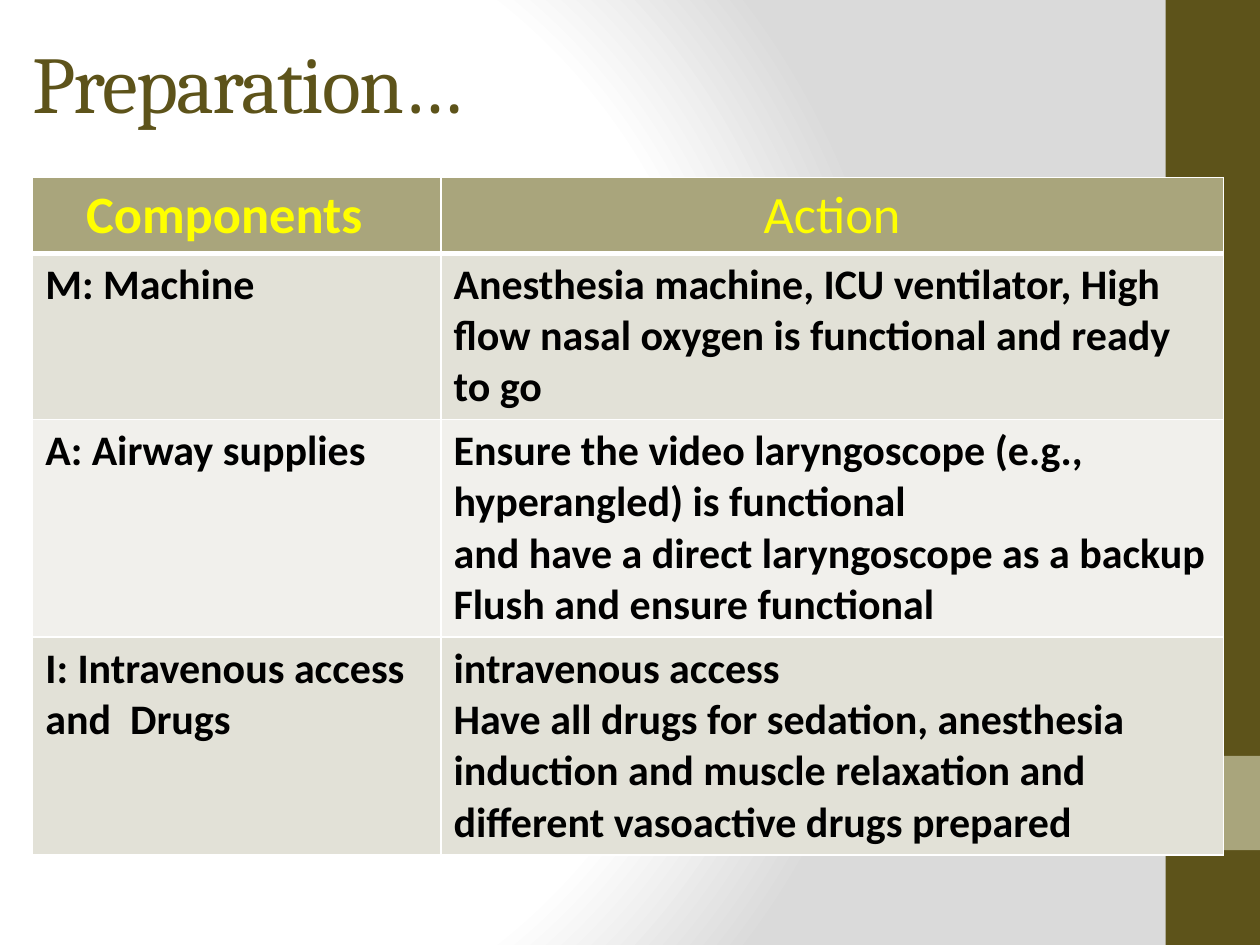
from pptx import Presentation
from pptx.dml.color import RGBColor
from pptx.enum.shapes import MSO_SHAPE
from pptx.enum.text import MSO_ANCHOR, PP_ALIGN
from pptx.oxml import parse_xml
from pptx.oxml.ns import nsdecls, qn
from pptx.util import Cm, Pt

OLIVE, SAGE, WHITE, YELLOW, BLACK = "5D531A", "A9A57C", "FFFFFF", "FFFF00", "000000"
BANDS = ["E2E1D7", "F1F0EC"]
COL_WIDTHS = [8.23, 15.77]
ROW_HEIGHTS = [1.52, 3.35, 4.39, 4.39]
HEADERS = ["Components", "Action"]
ROWS = [
    ("M: Machine",
     "Anesthesia machine, ICU ventilator, High flow nasal oxygen is functional and ready to go"),
    ("A: Airway supplies",
     "Ensure the video laryngoscope (e.g., hyperangled) is functional\n"
     "and have a direct laryngoscope as a backup Flush and ensure functional"),
    ("I: Intravenous access and  Drugs",
     "intravenous access\n"
     "Have all drugs for sedation, anesthesia induction and muscle relaxation and "
     "different vasoactive drugs prepared"),
]


def rgb(value):
    return RGBColor.from_string(value)


def add_text(tf, text, size, color, font="Calibri", bold=False, align=PP_ALIGN.LEFT, spacing=None):
    for i, line in enumerate(text.split("\n")):
        p = tf.add_paragraph() if i else tf.paragraphs[0]
        p.alignment = align
        r = p.add_run()
        r.text = line
        r.font.name = font
        r.font.size = Pt(size)
        r.font.bold = bold
        r.font.color.rgb = rgb(color)
        if spacing is not None:
            r.font._element.set("spc", str(spacing * 100))


def set_background(s):
    s.background.fill.gradient()
    old = s.element.find(".//" + qn("a:gradFill"))
    stops = "".join(
        f'<a:gs pos="{pos * 1000}"><a:srgbClr val="{color}"/></a:gs>'
        for pos, color in [(0, WHITE), (75, WHITE), (100, "DADADA")])
    old.getparent().replace(old, parse_xml(
        f'<a:gradFill {nsdecls("a")} rotWithShape="1"><a:gsLst>{stops}</a:gsLst>'
        '<a:path path="circle"><a:fillToRect l="20000" t="50000" r="100000" b="50000"/>'
        '</a:path></a:gradFill>'))


def add_bar(s, top, height, color):
    sp = s.shapes.add_shape(MSO_SHAPE.RECTANGLE, Cm(23.5), Cm(top), Cm(1.9), Cm(height))
    sp.shadow.inherit = False
    sp.fill.solid()
    sp.fill.fore_color.rgb = rgb(color)
    sp.line.fill.background()


def add_title(s, text):
    tf = s.shapes.add_textbox(Cm(0.41), Cm(0.18), Cm(23.52), Cm(2.92)).text_frame
    tf.word_wrap = True
    tf.vertical_anchor = MSO_ANCHOR.MIDDLE
    add_text(tf, text, 46, OLIVE, font="Cambria", spacing=-1)


def style_cell(cell, color, bottom=1):
    tcPr = cell._tc.get_or_add_tcPr()
    for side, width in [("L", 1), ("R", 1), ("T", 1), ("B", bottom)]:
        tcPr.append(parse_xml(
            f'<a:ln{side} {nsdecls("a")} w="{Pt(width)}"><a:solidFill>'
            f'<a:srgbClr val="{WHITE}"/></a:solidFill></a:ln{side}>'))
    cell.fill.solid()
    cell.fill.fore_color.rgb = rgb(color)


def add_action_table(s):
    table = s.shapes.add_table(
        len(ROW_HEIGHTS), len(COL_WIDTHS), Cm(0.66), Cm(3.58),
        Cm(sum(COL_WIDTHS)), Cm(sum(ROW_HEIGHTS))).table
    for column, width in zip(table.columns, COL_WIDTHS):
        column.width = Cm(width)
    for row, height in zip(table.rows, ROW_HEIGHTS):
        row.height = Cm(height)
    for j, text in enumerate(HEADERS):
        cell = table.cell(0, j)
        style_cell(cell, SAGE, bottom=3)
        add_text(cell.text_frame, text, 30, YELLOW, bold=j == 0, align=PP_ALIGN.CENTER)
    table.cell(0, 0).margin_right = Cm(0.76)
    for i, texts in enumerate(ROWS):
        for j, text in enumerate(texts):
            cell = table.cell(i + 1, j)
            style_cell(cell, BANDS[i % 2])
            add_text(cell.text_frame, text, 24, BLACK, bold=True)


def main():
    prs = Presentation()
    prs.slide_width, prs.slide_height = Cm(25.4), Cm(19.05)
    s = prs.slides.add_slide(prs.slide_layouts[6])
    set_background(s)
    add_bar(s, 0, 19.05, OLIVE)
    add_bar(s, 15.24, 1.9, SAGE)
    add_title(s, "Preparation…")
    add_action_table(s)
    prs.save("out.pptx")


if __name__ == "__main__":
    main()
